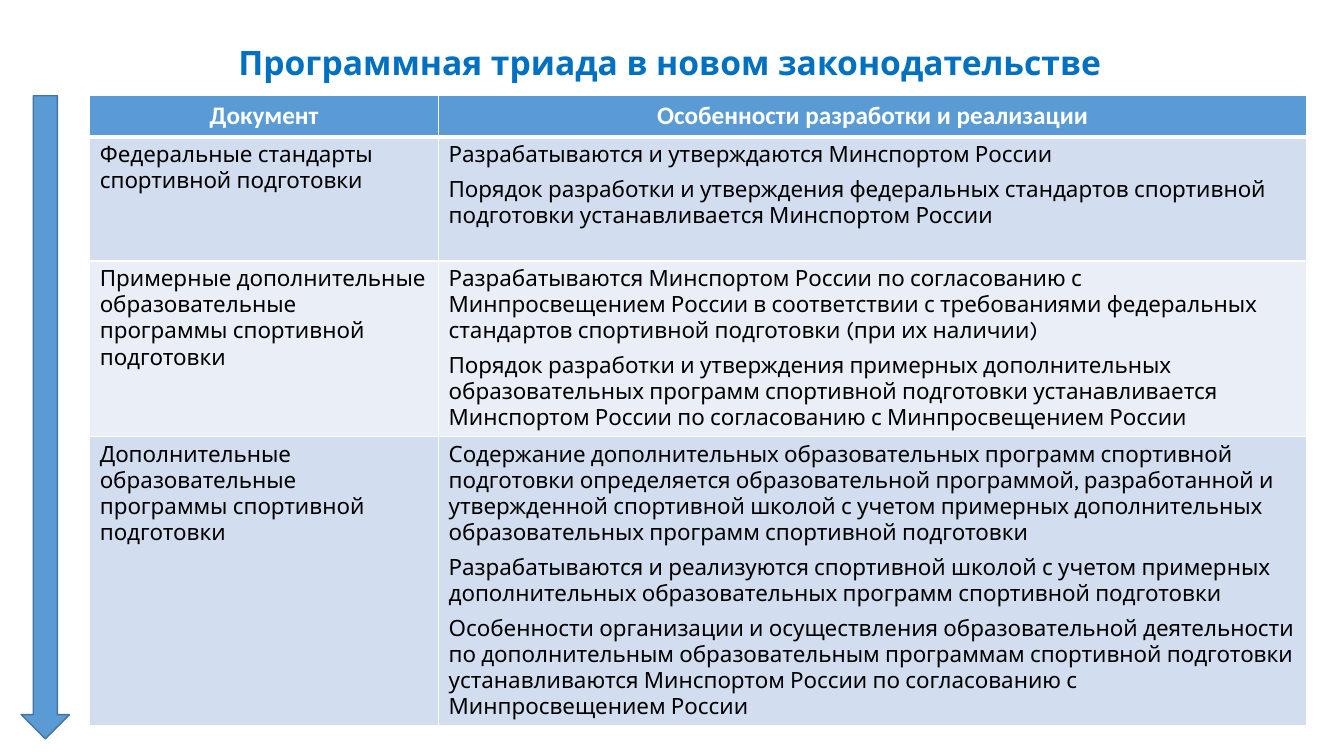
from lxml import etree
from pptx import Presentation
from pptx.dml.color import RGBColor
from pptx.enum import shapes, text
from pptx.oxml import ns
from pptx.util import Inches, Pt

WHITE = RGBColor(0xFF, 0xFF, 0xFF)
BLACK = RGBColor(0, 0, 0)
TITLE = RGBColor(0x00, 0x70, 0xC0)
BLUE = RGBColor(0x5B, 0x9B, 0xD5)
EDGE = RGBColor(0x43, 0x73, 0x9E)
BANDS = RGBColor(0xD2, 0xDE, 0xEF), RGBColor(0xEA, 0xEF, 0xF7)

HEAD = ["Документ"], ["Особенности разработки и реализации"]
ROWS = [
    (["Федеральные стандарты спортивной подготовки"],
     ["Разрабатываются и утверждаются Минспортом России",
      "Порядок разработки и утверждения федеральных стандартов спортивной "
      "подготовки устанавливается Минспортом России"]),
    (["Примерные дополнительные образовательные программы спортивной подготовки"],
     ["Разрабатываются Минспортом России по согласованию с Минпросвещением "
      "России в соответствии с требованиями федеральных стандартов спортивной "
      "подготовки (при их наличии)",
      "Порядок разработки и утверждения примерных дополнительных "
      "образовательных программ спортивной подготовки устанавливается "
      "Минспортом России по согласованию с Минпросвещением России"]),
    (["Дополнительные образовательные программы спортивной подготовки"],
     ["Содержание дополнительных образовательных программ спортивной "
      "подготовки определяется образовательной программой, разработанной и "
      "утвержденной спортивной школой с учетом примерных дополнительных "
      "образовательных программ спортивной подготовки",
      "Разрабатываются и реализуются спортивной школой с учетом примерных "
      "дополнительных образовательных программ спортивной подготовки",
      "Особенности организации и осуществления образовательной деятельности "
      "по дополнительным образовательным программам спортивной подготовки "
      "устанавливаются Минспортом России по согласованию с "
      "Минпросвещением России"]),
]
COLS = 3.46, 8.61
TALL = 0.41, 1.23, 1.74, 2.87


class Deck:
    body, head = "Karla", "Calibri"

    def __init__(self):
        self.prs = Presentation()
        self.prs.slide_width = Inches(13.33)
        self.prs.slide_height = Inches(7.5)
        self.slide = self.prs.slides.add_slide(self.prs.slide_layouts[5])

    def style(self, para, name, size, color, bold=False):
        font = para.font
        font.name, font.size, font.bold = name, Pt(size), bold
        font.color.rgb = color

    def title(self, words, x, y, w, h):
        box = self.slide.shapes.title
        box.left, box.top, box.width, box.height = map(Inches, (x, y, w, h))
        frame = box.text_frame
        frame.text = words
        frame.auto_size = text.MSO_AUTO_SIZE.NONE
        frame.vertical_anchor = text.MSO_ANCHOR.MIDDLE
        para = frame.paragraphs[0]
        para.alignment = text.PP_ALIGN.CENTER
        self.style(para, self.body, 24, TITLE, True)

    def arrow(self, x, y, w, h):
        shape = self.slide.shapes.add_shape(
            shapes.MSO_SHAPE.DOWN_ARROW, *map(Inches, (x, y, w, h)))
        shape.shadow.inherit = False
        shape.fill.solid()
        shape.fill.fore_color.rgb = BLUE
        shape.line.color.rgb = EDGE
        shape.line.width = Pt(1)

    def border(self, cell, **sides):
        props = cell._tc.get_or_add_tcPr()
        for side in "LRTB":
            line = etree.SubElement(props, ns.qn("a:ln" + side),
                                    w=str(Pt(sides.get(side, 1))))
            fill = etree.SubElement(line, ns.qn("a:solidFill"))
            etree.SubElement(fill, ns.qn("a:srgbClr"), val=str(WHITE))

    def cell(self, cell, lines, row):
        # The rule under the header is thicker than the rest
        self.border(cell, **{0: {"B": 3}, 1: {"T": 3}}.get(row, {}))
        cell.fill.solid()
        cell.fill.fore_color.rgb = BANDS[(row - 1) % 2] if row else BLUE
        frame = cell.text_frame
        frame.text = "\n".join(lines)
        for para in frame.paragraphs:
            if row:
                self.style(para, self.body, 16, BLACK)
            else:
                self.style(para, self.head, 18, WHITE, True)
                para.alignment = text.PP_ALIGN.CENTER
            if len(lines) > 1:
                para.space_after = Pt(6)

    def table(self, rows, x, y, cols, tall):
        grid = self.slide.shapes.add_table(
            len(rows), len(cols), Inches(x), Inches(y),
            Inches(sum(cols)), Inches(sum(tall))).table
        for col, width in zip(grid.columns, cols):
            col.width = Inches(width)
        for r, (row, height) in enumerate(zip(rows, tall)):
            grid.rows[r].height = Inches(height)
            for c, lines in enumerate(row):
                self.cell(grid.cell(r, c), lines, r)


def main():
    deck = Deck()
    # Heading
    deck.title("Программная триада в новом законодательстве",
               0.69, 0.28, 11.91, 0.67)
    # Documents and their rules
    deck.table([HEAD] + ROWS, 0.89, 0.95, COLS, TALL)
    # Order of documents
    deck.arrow(0.21, 0.95, 0.48, 6.38)
    deck.prs.save("out.pptx")


if __name__ == "__main__":
    main()
